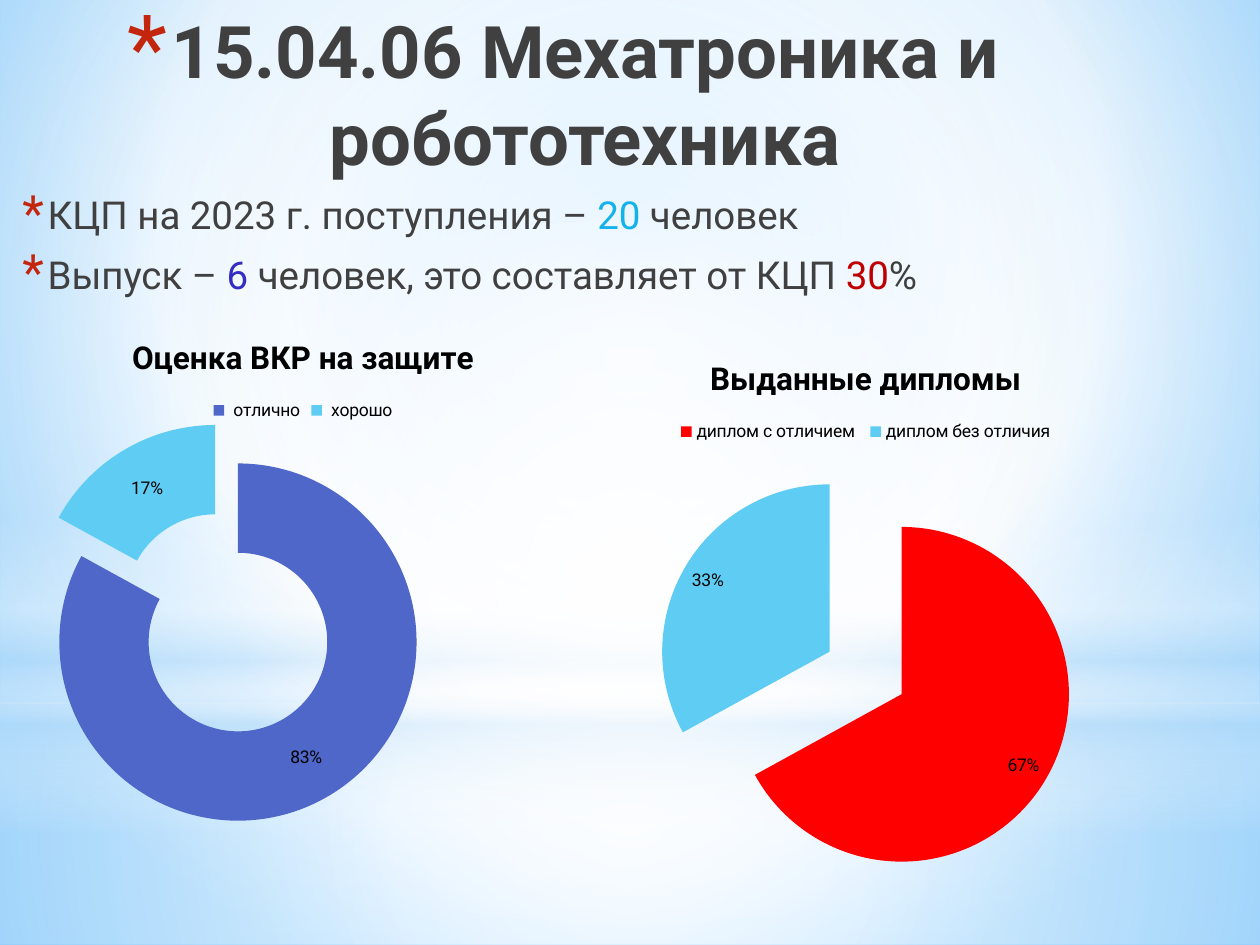
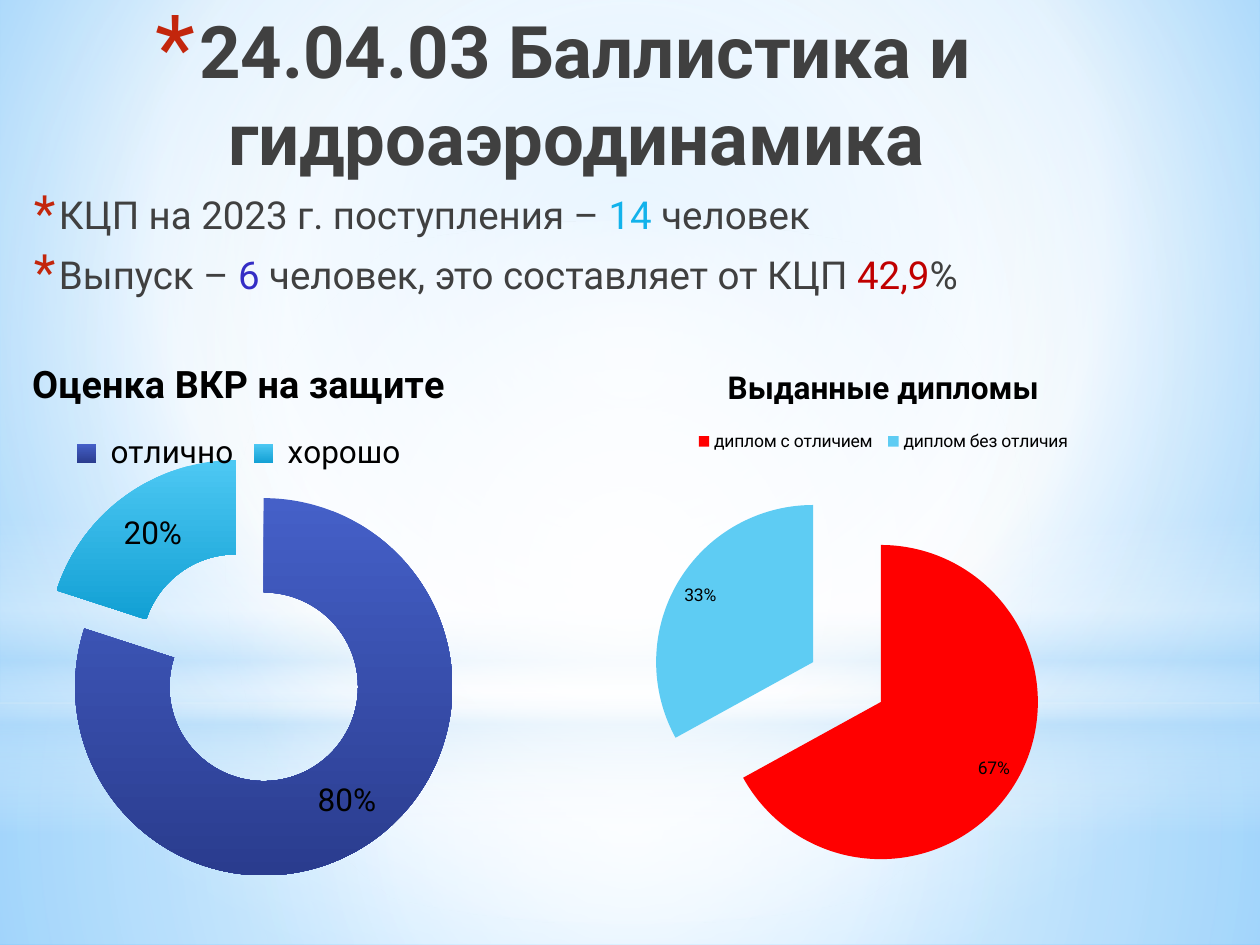
import pptx
import pptx.chart.data
import pptx.dml.color
import pptx.enum.chart
import pptx.enum.shapes
import pptx.enum.text
import pptx.oxml
import pptx.oxml.ns
import pptx.util
from lxml import etree

Inches = pptx.util.Inches
Pt = pptx.util.Pt
qn = pptx.oxml.ns.qn
CHART_KINDS = pptx.enum.chart.XL_CHART_TYPE
SHAPE_KINDS = pptx.enum.shapes.MSO_SHAPE

FONT = "Roboto"
TEXT, BULLET, BLACK = "404040", "C3260C", "000000"
QUOTA, GRADUATES, SHARE = "12B2EB", "342DC5", "C00000"
INDIGO, SKY, RED = "4E67C8", "5ECCF3", "FF0000"
INDIGO_FADE, SKY_FADE = ("4560C8", "2A3C8E"), ("4DC8F3", "12A0D4")

CENTER = (50, 50, 50, 50)
BACKGROUND = [(0, "9ED5FF"), (60, "FFFFFF"), (100, "5BB9FF")]
TITLE_FADE = [(0, "000000"), (40, TEXT), (100, "212745", 65)]
BANDS = [
    (SHAPE_KINDS.RECTANGLE, (0, 5.58, 10, 1.92),
     [(0, "FFFFFF", 91), (37, "FFFFFF", 76), (100, "B4DCFA", 79)], CENTER),
    (SHAPE_KINDS.RECTANGLE, (0, 0, 10, 5.58),
     [(0, "FFFFFF", 89), (48, "FFFFFF", 62), (100, "B4DCFA", 79)], CENTER),
    (SHAPE_KINDS.RECTANGLE, (0, 4.12, 10, 2.5),
     [(0, "FFFFFF", 0), (29, "FFFFFF", 30), (45, "B4DCFA", 40),
      (55, "FFFFFF", 26), (65, "B4DCFA", 60), (100, "FFFFFF", 0)], None),
    (SHAPE_KINDS.OVAL, (0, 1.75, 10, 5.58),
     [(0, "FFFFFF"), (56, "FFFFFF", 0)], CENTER),
]

GRADES = (" отлично", " хорошо")
DIPLOMAS = ("диплом с отличием ", "диплом без отличия")

PROGRAMMES = [
    {
        "title": "15.04.06 Мехатроника и робототехника",
        "facts": {"box": (0.03, 1.47, 8.94, 1.02), "quota": "20", "share": "30"},
        "grades": {"box": (-0.35, 2.49, 5.51, 4.09), "values": (83, 17),
                   "colors": (INDIGO, SKY), "plot_box": (0.1, 0.21, 0.58, 0.78)},
        "diplomas": {"box": (3.74, 2.65, 6.26, 4.49)},
    },
    {
        "title": "24.04.03 Баллистика и гидроаэродинамика ",
        "facts": {"box": (0.12, 1.47, 8.94, 1.1), "quota": "14", "share": "42,9"},
        "grades": {"box": (-1.06, 2.65, 5.91, 4.57), "values": (80, 20),
                   "colors": (INDIGO_FADE, SKY_FADE), "size": 18, "title_size": 21.6,
                   "plot_box": (0.23, 0.21, 0.57, 0.74)},
        "diplomas": {"box": (3.82, 2.73, 6.38, 4.33),
                     "plot_box": (0, 0.26, 0.91, 0.72)},
    },
]


def rgb(value):
    return pptx.dml.color.RGBColor.from_string(value)


def inches(box):
    return [Inches(length) for length in box]


def add_xml(parent, tag, **attributes):
    child = etree.SubElement(parent, qn(tag))
    for key, value in attributes.items():
        child.set(key, str(value))
    return child


def set_gradient(fill, element, stops, focus=None):
    """Fill with (position, colour, opacity) stops, circular around focus or top-down."""
    fill.gradient()
    gradient = element.find(".//" + qn("a:gradFill"))
    for child in list(gradient):
        gradient.remove(child)
    stop_list = add_xml(gradient, "a:gsLst")
    for position, color, *opacity in stops:
        stop = add_xml(stop_list, "a:gs", pos=position * 1000)
        stop_color = add_xml(stop, "a:srgbClr", val=color)
        for percent in opacity:
            add_xml(stop_color, "a:alpha", val=percent * 1000)
    if focus:
        circle = add_xml(gradient, "a:path", path="circle")
        sides = {side: share * 1000 for side, share in zip("ltrb", focus)}
        add_xml(circle, "a:fillToRect", **sides)
    else:
        add_xml(gradient, "a:lin", ang=90 * 60000, scaled=0)


def style_font(font, size, color=None, bold=False):
    for key, value in {"name": FONT, "size": Pt(size), "bold": bold}.items():
        setattr(font, key, value)
    if color:
        font.color.rgb = rgb(color)


def set_bullet(paragraph, margin, indent, percent):
    properties = paragraph._p.get_or_add_pPr()
    properties.set("marL", str(Inches(margin)))
    properties.set("indent", str(Inches(indent)))
    add_xml(add_xml(properties, "a:buClr"), "a:srgbClr", val=BULLET)
    add_xml(properties, "a:buSzPct", val=percent * 1000)
    add_xml(properties, "a:buFont", typeface=FONT)
    add_xml(properties, "a:buChar", char="*")


def decorate_master(master, slide):
    """Draw the bands on a slide, then move them behind the master's placeholders."""
    set_gradient(master.background.fill, master.element, BACKGROUND, (20, 10, 20, 60))
    for depth, (kind, box, stops, focus) in enumerate(BANDS):
        band = slide.shapes.add_shape(kind, *inches(box))
        band.shadow.inherit = False
        band.line.fill.background()
        set_gradient(band.fill, band.element, stops, focus)
        master.shapes.element.insert(2 + depth, band.element)


def format_title(slide, text):
    title = slide.shapes.title
    title.left, title.top, title.width, title.height = inches((0.51, 0, 7.92, 1.25))
    frame = title.text_frame
    frame.auto_size = pptx.enum.text.MSO_AUTO_SIZE.NONE
    frame.vertical_anchor = pptx.enum.text.MSO_ANCHOR.TOP
    paragraph = frame.paragraphs[0]
    paragraph.alignment = pptx.enum.text.PP_ALIGN.CENTER
    set_bullet(paragraph, 0.35, -0.35, 128)
    run = paragraph.add_run()
    run.text = text
    style_font(run.font, 41.4, bold=True)
    set_gradient(run.font.fill, title.element, TITLE_FADE)


def add_facts(slide, box, quota, share):
    frame = slide.shapes.add_textbox(*inches(box)).text_frame
    frame.word_wrap = True
    facts = [
        [("КЦП на 2023 г. поступления – ", TEXT), (quota + " ", QUOTA), ("человек", TEXT)],
        [("Выпуск – ", TEXT), ("6 ", GRADUATES),
         ("человек, это составляет от КЦП ", TEXT), (share, SHARE), ("%", TEXT)],
    ]
    for index, fact in enumerate(facts):
        paragraph = frame.add_paragraph() if index else frame.paragraphs[0]
        paragraph.space_before = Pt(4.4)
        paragraph.space_after = Pt(3)
        set_bullet(paragraph, 0.25, -0.2, 130)
        for text, color in fact:
            run = paragraph.add_run()
            run.text = text
            style_font(run.font, 22, color)


def place_plot(chart, plot_box):
    """Fix the inner plot area, given as fractions of the chart."""
    area = chart.element.find(".//" + qn("c:plotArea"))
    for automatic in area.findall(qn("c:layout")):
        area.remove(automatic)
    layout = add_xml(area, "c:layout")
    area.insert(0, layout)
    manual = add_xml(layout, "c:manualLayout")
    add_xml(manual, "c:layoutTarget", val="inner")
    for side in "xy":
        add_xml(manual, f"c:{side}Mode", val="edge")
    for side, share in zip("xywh", plot_box):
        add_xml(manual, f"c:{side}", val=share)


def fill_slice(fill, color):
    """Fill with one colour, or fade down through a pair."""
    if isinstance(color, str):
        fill.solid()
        fill.fore_color.rgb = rgb(color)
        return
    fill.gradient()
    fill.gradient_angle = 270
    for stop, shade in zip(fill.gradient_stops, color):
        stop.color.rgb = rgb(shade)


def add_share_chart(slide, kind, title, categories, box, values, colors,
                    size=10, title_size=18, plot_box=None):
    data = pptx.chart.data.CategoryChartData()
    data.categories = categories
    data.add_series("Series 1", values)
    chart = slide.shapes.add_chart(kind, *inches(box), data).chart
    style_font(chart.font, size, BLACK)

    chart.has_title = True
    chart.chart_title.include_in_layout = False
    heading = chart.chart_title.text_frame
    heading.text = title
    style_font(heading.paragraphs[0].runs[0].font, title_size, BLACK, bold=True)

    chart.has_legend = True
    chart.legend.position = pptx.enum.chart.XL_LEGEND_POSITION.TOP
    chart.legend.include_in_layout = False
    style_font(chart.legend.font, size, BLACK)

    plot = chart.plots[0]
    plot.vary_by_categories = True
    for index, color in enumerate(colors):
        fill_slice(plot.series[0].points[index].format.fill, color)
    plot.has_data_labels = True
    labels = plot.data_labels
    label_format = {"show_percentage": True, "show_value": False,
                    "number_format": "0%", "number_format_is_linked": False}
    if kind == CHART_KINDS.PIE_EXPLODED:
        label_format["position"] = pptx.enum.chart.XL_LABEL_POSITION.INSIDE_END
    for key, value in label_format.items():
        setattr(labels, key, value)
    style_font(labels.font, size, BLACK)
    if plot_box:
        place_plot(chart, plot_box)


def main():
    deck = pptx.Presentation()
    deck.slide_width, deck.slide_height = Inches(10), Inches(7.5)
    title_only = deck.slide_layouts[5]
    for programme in PROGRAMMES:
        slide = deck.slides.add_slide(title_only)
        if len(deck.slides) == 1:
            decorate_master(deck.slide_master, slide)
        format_title(slide, programme["title"])
        add_facts(slide, **programme["facts"])
        add_share_chart(slide, CHART_KINDS.DOUGHNUT_EXPLODED, "Оценка ВКР на защите",
                        GRADES, **programme["grades"])
        add_share_chart(slide, CHART_KINDS.PIE_EXPLODED, "Выданные дипломы", DIPLOMAS,
                        values=(67, 33), colors=(RED, SKY), **programme["diplomas"])
    deck.save("out.pptx")


if __name__ == "__main__":
    main()
